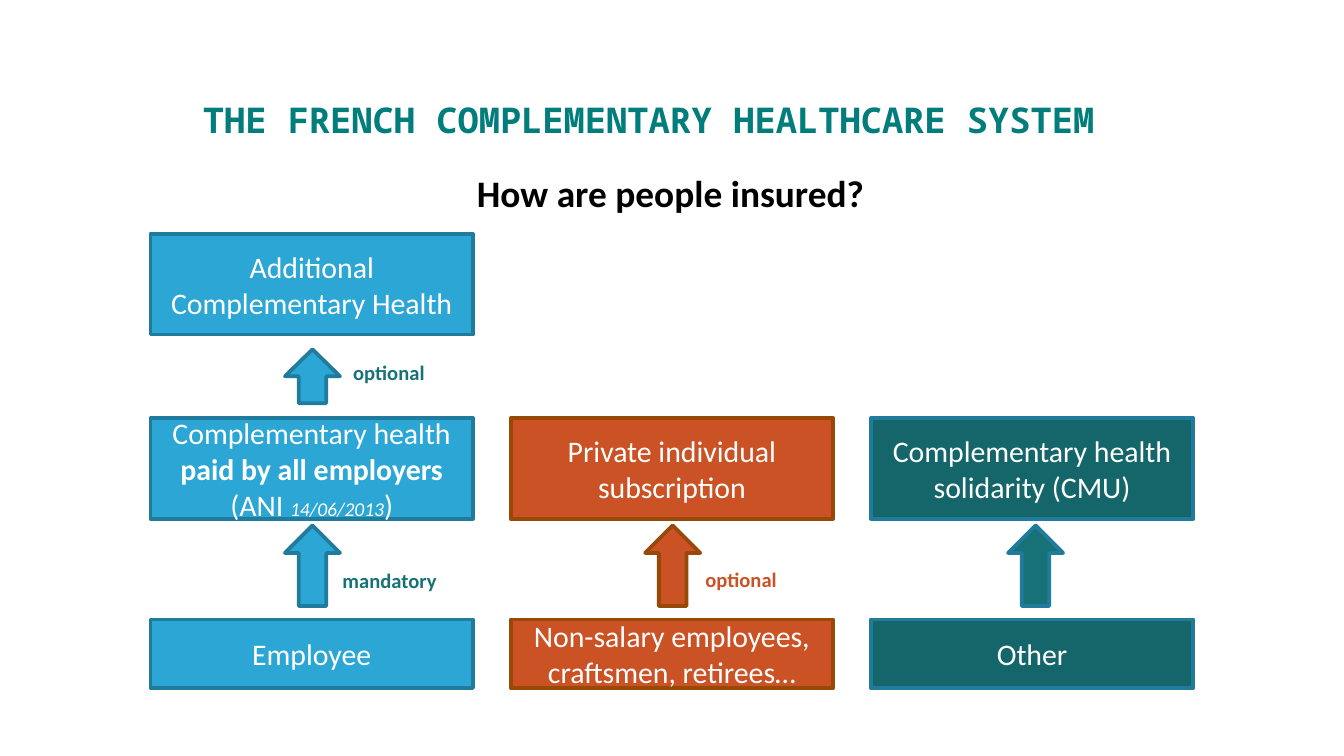
from pptx import Presentation
from pptx.dml.color import RGBColor as RGB
from pptx.enum.shapes import MSO_SHAPE as Shape
from pptx.enum.text import MSO_ANCHOR as Anchor, PP_ALIGN as Align
from pptx.util import Inches, Pt

COLORS = {
    "title": "017D7C", "black": "000000", "white": "FFFFFF",
    "blue": "2CA6D4", "blue_edge": "217B9D",
    "orange": "CB5225", "orange_edge": "984807",
    "green": "14666A", "teal": "177277",
}

# Column grid, and rows as (top, height), in inches
LEFT, PITCH, BOX_W, ARROW_W = 1.12, 2.68, 2.4, 0.41
ROWS = {
    "extra": (1.74, 0.75), "extra_arrow": (2.6, 0.4),
    "cover": (3.11, 0.75), "cover_arrow": (3.91, 0.6),
    "people": (4.61, 0.51),
}

# One column each: box fill, arrow fill, edge, arrow offset, cover, people
COLUMNS = [
    ("blue", "blue", "blue_edge", 1.0,
     [("Complementary health ", {}),
      ("paid by all employers ", {"bold": True}),
      ("(ANI ", {}),
      ("14/06/2013", {"size": 10.5, "italic": True}),
      (")", {})],
     "Employee"),
    ("orange", "orange", "orange_edge", 1.0,
     "Private individual subscription",
     "Non-salary employees, craftsmen, retirees…"),
    ("green", "teal", "blue_edge", 1.02,
     "Complementary health solidarity (CMU)",
     "Other"),
]

# Arrow labels: text, left, top, colour
LABELS = [
    ("mandatory", 2.45, 4.18, "teal"),
    ("optional", 2.53, 2.63, "teal"),
    ("optional", 5.15, 4.17, "orange"),
]


def write(holder, content, size=16, color="white", font="Calibri",
          bold=False, italic=False, align=Align.CENTER, anchor=Anchor.TOP):
    """Fill a shape with a string or a list of (text, format changes)."""
    frame = holder.text_frame
    frame.word_wrap = True
    frame.vertical_anchor = anchor
    paragraph = frame.paragraphs[0]
    paragraph.alignment = align
    parts = [(content, {})] if isinstance(content, str) else content
    for text, changes in parts:
        run = paragraph.add_run()
        run.text = text
        run.font.name = font
        run.font.size = Pt(changes.get("size", size))
        run.font.bold = changes.get("bold", bold)
        run.font.italic = changes.get("italic", italic)
        run.font.color.rgb = RGB.from_string(COLORS[color])


def add_label(slide, content, left, top, width, height, inset=(0.1, 0.05), **style):
    label = slide.shapes.add_textbox(*map(Inches, (left, top, width, height)))
    frame = label.text_frame
    frame.margin_left = frame.margin_right = Inches(inset[0])
    frame.margin_top = frame.margin_bottom = Inches(inset[1])
    write(label, content, **style)


def add_block(slide, kind, column, row, width, fill, edge, offset=0):
    top, height = ROWS[row]
    left = LEFT + column * PITCH + offset
    block = slide.shapes.add_shape(kind, *map(Inches, (left, top, width, height)))
    block.shadow.inherit = False
    block.fill.solid()
    block.fill.fore_color.rgb = RGB.from_string(COLORS[fill])
    block.line.color.rgb = RGB.from_string(COLORS[edge])
    block.line.width = Pt(2)
    return block


def add_box(slide, column, row, content, fill, edge):
    box = add_block(slide, Shape.RECTANGLE, column, row, BOX_W, fill, edge)
    write(box, content, anchor=Anchor.MIDDLE)


def add_arrow(slide, column, row, fill, edge, offset):
    add_block(slide, Shape.UP_ARROW, column, row, ARROW_W, fill, edge, offset)


def main():
    deck = Presentation()
    # Widescreen, 16 to 9
    deck.slide_width = Inches(10)
    deck.slide_height = deck.slide_width * 9 // 16
    slide = deck.slides.add_slide(deck.slide_layouts[6])

    # Headings
    add_label(slide, "THE FRENCH COMPLEMENTARY HEALTHCARE SYSTEM",
              1.42, 0.69, 8.3, 0.36, inset=(0.09, 0.04), size=19,
              color="title", font="Noto Sans Mono", bold=True, align=Align.LEFT)
    add_label(slide, "How are people insured?", 0.07, 1.23, 9.84, 4.07,
              inset=(0.09, 0.04), size=20, color="black", bold=True)

    # People at the bottom, their cover above
    for i, (fill, arrow_fill, edge, offset, cover, people) in enumerate(COLUMNS):
        add_box(slide, i, "people", people, fill, edge)
        add_arrow(slide, i, "cover_arrow", arrow_fill, edge, offset)
        add_box(slide, i, "cover", cover, fill, edge)

    # Extra level for employees
    add_arrow(slide, 0, "extra_arrow", "blue", "blue_edge", 1.0)
    add_box(slide, 0, "extra", "Additional Complementary Health", "blue", "blue_edge")

    # Arrow labels
    for text, left, top, color in LABELS:
        add_label(slide, text, left, top, 1.26, 0.29, size=11,
                  color=color, bold=True, align=Align.LEFT)

    deck.save("out.pptx")


if __name__ == "__main__":
    main()
